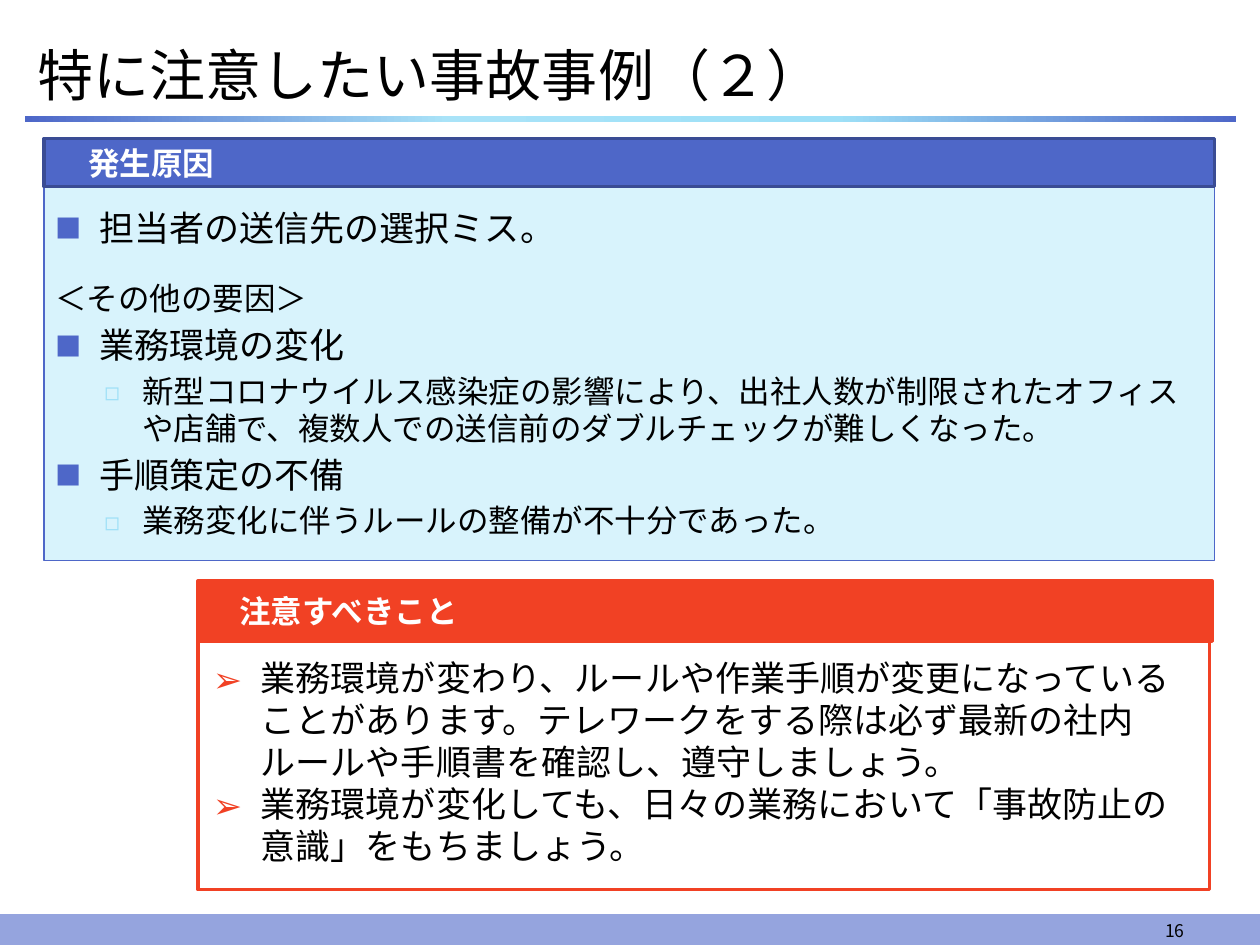
import pptx
import pptx.util
import pptx.dml.color
import pptx.enum.shapes
import pptx.enum.text
import pptx.oxml
import pptx.oxml.ns
from lxml import etree

Inches, Pt = pptx.util.Inches, pptx.util.Pt
RGBColor = pptx.dml.color.RGBColor
ANCHOR = pptx.enum.text.MSO_ANCHOR
ALIGN = pptx.enum.text.PP_ALIGN
qn = pptx.oxml.ns.qn

FONT = "Noto Sans CJK JP"
BLACK = RGBColor(0x00, 0x00, 0x00)
WHITE = RGBColor(0xFF, 0xFF, 0xFF)
BLUE = RGBColor(0x4E, 0x67, 0xC8)
NAVY = RGBColor(0x3A, 0x4C, 0x94)
LAVENDER = RGBColor(0x95, 0xA4, 0xDE)
PALE = RGBColor(0xD8, 0xF3, 0xFC)
SKY = RGBColor(0xA9, 0xE3, 0xF8)
CYAN = RGBColor(0x9E, 0xE0, 0xF7)
RED = RGBColor(0xF1, 0x41, 0x24)


def add_rect(box, fill, line, width):
    sp = s.shapes.add_shape(pptx.enum.shapes.MSO_SHAPE.RECTANGLE, *map(Inches, box))
    sp.shadow.inherit = False
    sp.fill.solid()
    sp.fill.fore_color.rgb = fill
    sp.line.color.rgb = line
    sp.line.width = Pt(width)
    sp.text_frame.vertical_anchor = ANCHOR.MIDDLE
    return sp


def write(p, text, size, color=BLACK, bold=False, align=ALIGN.LEFT, bullet=None):
    """Fill a paragraph; bullet is (character, colour, size %, margin, hanging)."""
    p.text = text
    p.alignment = align
    font = p.runs[0].font
    font.size, font.bold, font.name = Pt(size), bold, FONT
    font.color.rgb = color
    etree.SubElement(p.runs[0]._r.get_or_add_rPr(), qn("a:ea"), typeface=FONT)
    if bullet:
        char, bullet_color, percent, margin, hanging = bullet
        pPr = p._p.get_or_add_pPr()
        pPr.set("marL", str(Inches(margin)))
        pPr.set("indent", str(-Inches(hanging)))
        clr = etree.SubElement(pPr, qn("a:buClr"))
        etree.SubElement(clr, qn("a:srgbClr"), val=str(bullet_color))
        etree.SubElement(pPr, qn("a:buSzPct"), val=str(percent * 1000))
        etree.SubElement(pPr, qn("a:buFont"), typeface=FONT)
        etree.SubElement(pPr, qn("a:buChar"), char=char)


prs = pptx.Presentation()
prs.slide_width, prs.slide_height = Inches(10), Inches(7.5)
s = prs.slides.add_slide(prs.slide_layouts[5])

# Title and gradient rule
title = s.shapes.title
title.left, title.top, title.width, title.height = map(Inches, (0.2, 0.26, 9.61, 0.65))
title.text_frame.auto_size = pptx.enum.text.MSO_AUTO_SIZE.NONE
title.text_frame.vertical_anchor = ANCHOR.MIDDLE
write(title.text_frame.paragraphs[0], "特に注意したい事故事例（２）", 32)

rule = add_rect((0.2, 0.92, 9.61, 0.05), BLUE, BLUE, 0.75)
rule.line.fill.background()
rule.fill.gradient()
rule.fill.gradient_angle = 0
stops = rule._element.spPr.find(qn("a:gradFill")).find(qn("a:gsLst"))
for stop in list(stops):
    stops.remove(stop)
for position, color in ((0, BLUE), (35, SKY), (67, CYAN), (100, BLUE)):
    stop = etree.SubElement(stops, qn("a:gs"), pos=str(position * 1000))
    etree.SubElement(stop, qn("a:srgbClr"), val=str(color))

# Footer band and page number
add_rect((0, 7.26, 10, 0.24), LAVENDER, LAVENDER, 0.75)
number = s.shapes.add_textbox(*map(Inches, (7.17, 7.21, 2.33, 0.31)))
number.text_frame.word_wrap = True
number.text_frame.vertical_anchor = ANCHOR.BOTTOM
write(number.text_frame.paragraphs[0], "16", 10, align=ALIGN.RIGHT)

# Panels with their headings
add_rect((0.35, 1.48, 9.29, 2.97), PALE, BLUE, 0.75)
advice = add_rect((1.57, 4.99, 8.03, 2.07), WHITE, RED, 2)
for text, box, fill, line, indent in (
    ("発生原因", (0.35, 1.1, 9.29, 0.38), BLUE, NAVY, 0.35),
    ("注意すべきこと", (1.57, 4.61, 8.05, 0.48), RED, RED, 0.33),
):
    tf = add_rect(box, fill, line, 2).text_frame
    tf.margin_left = Inches(indent)
    tf.margin_top = tf.margin_bottom = Inches(0.01)
    write(tf.paragraphs[0], text, 18, WHITE, bold=True)

# Causes
MAIN = ("■", BLUE, 75, 0.35, 0.35)
SUB = ("◻", CYAN, 80, 0.69, 0.3)
causes = (
    ("担当者の送信先の選択ミス。", 20, 4, MAIN),
    ("＜その他の要因＞", 18, 18, None),
    ("業務環境の変化", 20, 4, MAIN),
    ("新型コロナウイルス感染症の影響により、出社人数が制限されたオフィスや店舗で、"
     "複数人での送信前のダブルチェックが難しくなった。", 18, 4, SUB),
    ("手順策定の不備", 20, 4, MAIN),
    ("業務変化に伴うルールの整備が不十分であった。", 18, 4, SUB),
)
tf = s.shapes.add_textbox(*map(Inches, (0.34, 1.59, 9.29, 2.48))).text_frame
tf.word_wrap = True
for i, (text, size, before, bullet) in enumerate(causes):
    p = tf.add_paragraph() if i else tf.paragraphs[0]
    p.level = 1 if bullet is SUB else 0
    p.line_spacing = Pt(24 if size == 20 else 21)
    p.space_before = Pt(before)
    write(p, text, size, bullet=bullet)

# Advice
tf = advice.text_frame
tf.margin_left = tf.margin_right = Inches(0.12)
tf.margin_top, tf.margin_bottom = Inches(0.04), 0
for i, text in enumerate((
    "業務環境が変わり、ルールや作業手順が変更になっていることがあります。"
    "テレワークをする際は必ず最新の社内ルールや手順書を確認し、遵守しましょう。",
    "業務環境が変化しても、日々の業務において「事故防止の意識」をもちましょう。",
)):
    p = tf.add_paragraph() if i else tf.paragraphs[0]
    p.line_spacing = Pt(24)
    write(p, text, 20, bullet=("➢", RED, 100, 0.38, 0.38))

prs.save("out.pptx")
